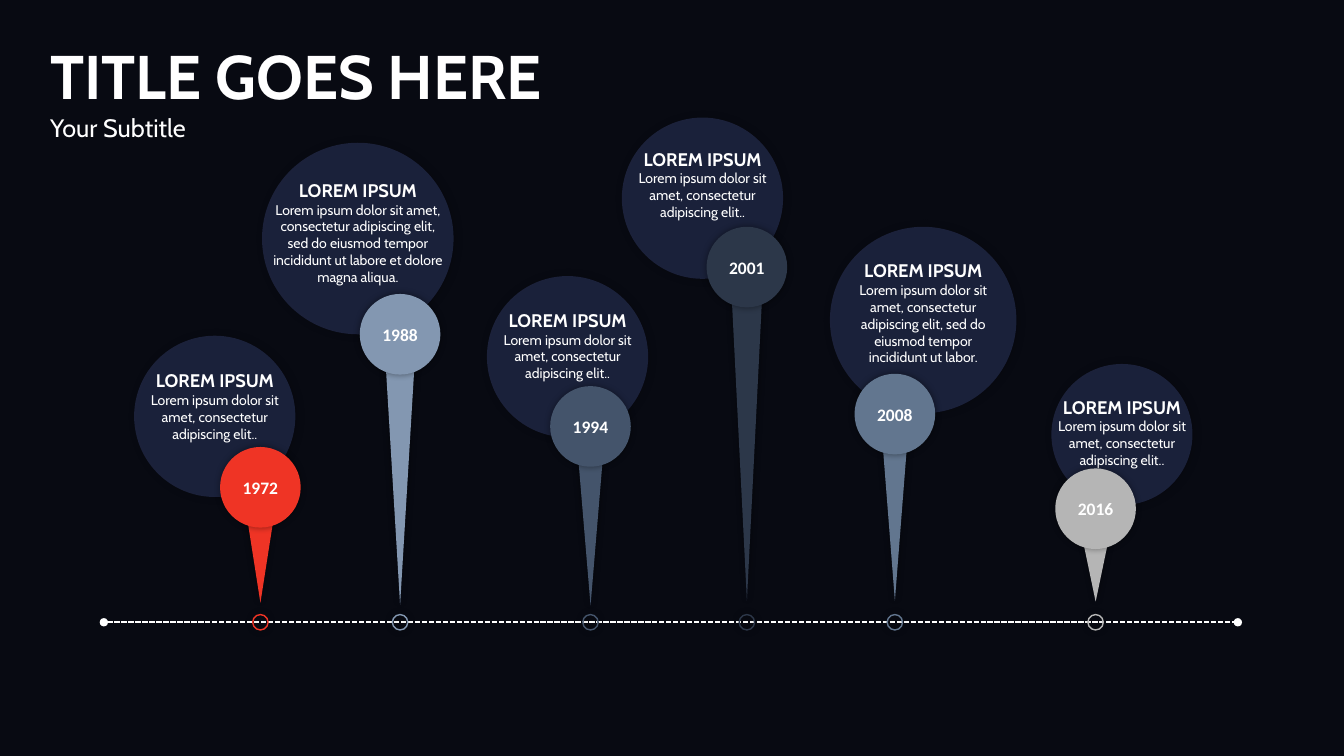
from dataclasses import dataclass
from typing import Any, Optional

from pptx import Presentation
from pptx.dml.color import RGBColor
from pptx.enum.dml import MSO_LINE
from pptx.enum.shapes import MSO_CONNECTOR, MSO_SHAPE
from pptx.enum.text import MSO_ANCHOR, MSO_AUTO_SIZE, PP_ALIGN
from pptx.oxml.ns import qn
from pptx.oxml.xmlchemy import OxmlElement
from pptx.util import Pt

WHITE = RGBColor(0xFF, 0xFF, 0xFF)
BLACK = RGBColor(0x00, 0x00, 0x00)
NAVY = RGBColor(0x22, 0x2A, 0x49)
RED = RGBColor(0xEF, 0x34, 0x25)
LIGHT_STEEL = RGBColor(0x83, 0x97, 0xB1)
SLATE = RGBColor(0x44, 0x54, 0x6B)
DARK_SLATE = RGBColor(0x2C, 0x37, 0x49)
STEEL = RGBColor(0x62, 0x76, 0x8F)
GREY = RGBColor(0xB5, 0xB5, 0xB5)

SLIDE_WIDTH, SLIDE_HEIGHT = 960, 540
AXIS_Y, AXIS_START, AXIS_END = 444.5, 74.2, 884.2
HEAD_SIZE, RING_SIZE = 57.6, 11

TITLE = {"name": "Cabin", "size": Pt(44), "bold": True}
SUBTITLE = {"name": "Cabin", "size": Pt(18), "bold": False}
HEADING = {"name": "Cabin", "size": Pt(13), "bold": True}
BODY = {"name": "Cabin", "size": Pt(10), "bold": False}
YEAR = {"name": "Calibri", "size": Pt(12.5), "bold": True}
CAPTION_FRAME = {"word_wrap": True, "auto_size": MSO_AUTO_SIZE.SHAPE_TO_FIT_TEXT,
                 "margin_left": Pt(5.4), "margin_right": Pt(5.4),
                 "margin_top": Pt(2.7), "margin_bottom": Pt(2.7)}
TITLE_FRAME = {"word_wrap": True, "auto_size": MSO_AUTO_SIZE.SHAPE_TO_FIT_TEXT}
YEAR_FRAME = {"word_wrap": False, "vertical_anchor": MSO_ANCHOR.MIDDLE,
              "margin_left": 0, "margin_right": 0}


@dataclass(frozen=True)
class Shadow:
    opacity: int
    blur: float
    distance: float


@dataclass(frozen=True)
class Box:
    left: float
    top: float
    width: float
    height: float

    def lengths(self) -> tuple:
        return Pt(self.left), Pt(self.top), Pt(self.width), Pt(self.height)


@dataclass(frozen=True)
class Milestone:
    year: str
    color: RGBColor
    pin_x: float
    head_top: float
    spike: tuple[float, float, float]  # top, width, height
    bubble: tuple[float, float, float]  # left, top, diameter
    caption: tuple[float, float, float]  # top, width, height
    body: str


BUBBLE_SHADOW = Shadow(25, 6, 1)
PIN_SHADOW = Shadow(40, 5, 0)
SHORT_BODY = "Lorem ipsum dolor sit amet, consectetur adipiscing elit.."
LONG_BODY = "Lorem ipsum dolor sit amet, consectetur adipiscing elit, sed do eiusmod tempor incididunt ut "

MILESTONES = [
    Milestone("1972", RED, 186, 319.3, (373, 18, 57.6),
              (95.8, 239.8, 115.2), (261.4, 118.8, 56.9), SHORT_BODY),
    Milestone("1988", LIGHT_STEEL, 285.8, 210, (252, 21.6, 180),
              (187.2, 102, 136.8), (125.3, 133.9, 81.4),
              LONG_BODY + "labore et dolore magna aliqua."),
    Milestone("1994", SLATE, 421.8, 275.8, (324.5, 18, 108),
              (347.8, 197.2, 115.2), (218.2, 118.8, 56.9), SHORT_BODY),
    Milestone("2001", DARK_SLATE, 533.5, 162, (213.1, 21.6, 216),
              (444.2, 84, 115.2), (103, 118.8, 56.9), SHORT_BODY),
    Milestone("2008", STEEL, 639.2, 267, (313.9, 18, 115.2),
              (592.8, 162, 133.2), (182.9, 118.8, 81.4), LONG_BODY + "labor."),
    Milestone("2016", GREY, 782.6, 334.6, (386.6, 18, 43.2),
              (751, 260, 100.8), (280.1, 118.8, 56.9), SHORT_BODY),
]


def apply_format(target: Any, values: dict) -> None:
    for attribute, value in values.items():
        setattr(target, attribute, value)


def add_alpha(color_element: Any, percent: int) -> None:
    alpha = OxmlElement("a:alpha")
    alpha.set("val", str(percent * 1000))
    color_element.append(alpha)


def draw_shape(slide: Any, kind: MSO_SHAPE, box: Box, fill: Optional[RGBColor] = None,
               opacity: int = 100, outline: Optional[RGBColor] = None,
               shadow: Optional[Shadow] = None) -> Any:
    shape = slide.shapes.add_shape(kind, *box.lengths())
    properties = shape._element.spPr
    if fill is None:
        shape.fill.background()
    else:
        shape.fill.solid()
        shape.fill.fore_color.rgb = fill
        if opacity < 100:
            add_alpha(properties.find(qn("a:solidFill"))[0], opacity)
    if outline is None:
        shape.line.fill.background()
    else:
        shape.line.color.rgb = outline
        shape.line.width = Pt(1)
    shape.shadow.inherit = False
    if shadow:
        outer = OxmlElement("a:outerShdw")
        for name, value in {"blurRad": Pt(shadow.blur), "dist": Pt(shadow.distance), "dir": 0,
                            "algn": "ctr", "rotWithShape": 0}.items():
            outer.set(name, str(value))
        shade = OxmlElement("a:srgbClr")
        shade.set("val", str(BLACK))
        add_alpha(shade, shadow.opacity)
        outer.append(shade)
        properties.find(qn("a:effectLst")).append(outer)
    return shape


def write_text(shape: Any, frame_format: dict, lines: list[tuple[str, dict]],
               alignment: PP_ALIGN = PP_ALIGN.CENTER) -> None:
    frame = shape.text_frame
    apply_format(frame, frame_format)
    for index, (text, font_format) in enumerate(lines):
        paragraph = frame.add_paragraph() if index else frame.paragraphs[0]
        paragraph.alignment = alignment
        run = paragraph.add_run()
        run.text = text
        apply_format(run.font, font_format)
        run.font.color.rgb = WHITE


def draw_bubble(slide: Any, milestone: Milestone) -> None:
    left, top, diameter = milestone.bubble
    draw_shape(slide, MSO_SHAPE.OVAL, Box(left, top, diameter, diameter),
               NAVY, opacity=75, shadow=BUBBLE_SHADOW)
    caption_top, width, height = milestone.caption
    box = Box(left + (diameter - width) / 2, caption_top, width, height)
    caption = slide.shapes.add_textbox(*box.lengths())
    write_text(caption, CAPTION_FRAME, [("LOREM IPSUM", HEADING), (milestone.body, BODY)])


def draw_pin(slide: Any, milestone: Milestone) -> None:
    top, width, height = milestone.spike
    spike = draw_shape(slide, MSO_SHAPE.ISOSCELES_TRIANGLE,
                       Box(milestone.pin_x - width / 2, top, width, height),
                       milestone.color, shadow=PIN_SHADOW)
    spike.rotation = 180
    head = draw_shape(slide, MSO_SHAPE.OVAL,
                      Box(milestone.pin_x - HEAD_SIZE / 2, milestone.head_top, HEAD_SIZE, HEAD_SIZE),
                      milestone.color, shadow=PIN_SHADOW)
    write_text(head, YEAR_FRAME, [(milestone.year, YEAR)])


def draw_axis(slide: Any) -> None:
    axis = slide.shapes.add_connector(MSO_CONNECTOR.STRAIGHT, Pt(AXIS_START), Pt(AXIS_Y),
                                      Pt(AXIS_END), Pt(AXIS_Y))
    apply_format(axis.line, {"width": Pt(1.25), "dash_style": MSO_LINE.SQUARE_DOT})
    axis.line.color.rgb = WHITE
    for end in ("a:headEnd", "a:tailEnd"):
        marker = OxmlElement(end)
        marker.set("type", "oval")
        axis.line._get_or_add_ln().append(marker)
    axis._element.spPr.append(OxmlElement("a:effectLst"))


def main() -> None:
    presentation = Presentation()
    apply_format(presentation, {"slide_width": Pt(SLIDE_WIDTH), "slide_height": Pt(SLIDE_HEIGHT)})
    slide = presentation.slides.add_slide(presentation.slide_layouts[6])

    # Background with dark veil
    slide.background.fill.solid()
    slide.background.fill.fore_color.rgb = NAVY
    draw_shape(slide, MSO_SHAPE.RECTANGLE, Box(0, 0, SLIDE_WIDTH, SLIDE_HEIGHT), BLACK, opacity=75)

    # Title and subtitle
    title = slide.shapes.add_textbox(*Box(28.8, 23.8, 468, 82).lengths())
    write_text(title, TITLE_FRAME, [("TITLE GOES HERE", TITLE), ("Your Subtitle", SUBTITLE)],
               PP_ALIGN.LEFT)

    # Milestones
    for milestone in MILESTONES:
        draw_bubble(slide, milestone)
        draw_pin(slide, milestone)

    # Time axis and its rings
    draw_axis(slide)
    for milestone in MILESTONES:
        ring = Box(milestone.pin_x - RING_SIZE / 2, AXIS_Y - RING_SIZE / 2, RING_SIZE, RING_SIZE)
        draw_shape(slide, MSO_SHAPE.OVAL, ring, outline=milestone.color, shadow=PIN_SHADOW)

    presentation.save("out.pptx")


if __name__ == "__main__":
    main()
